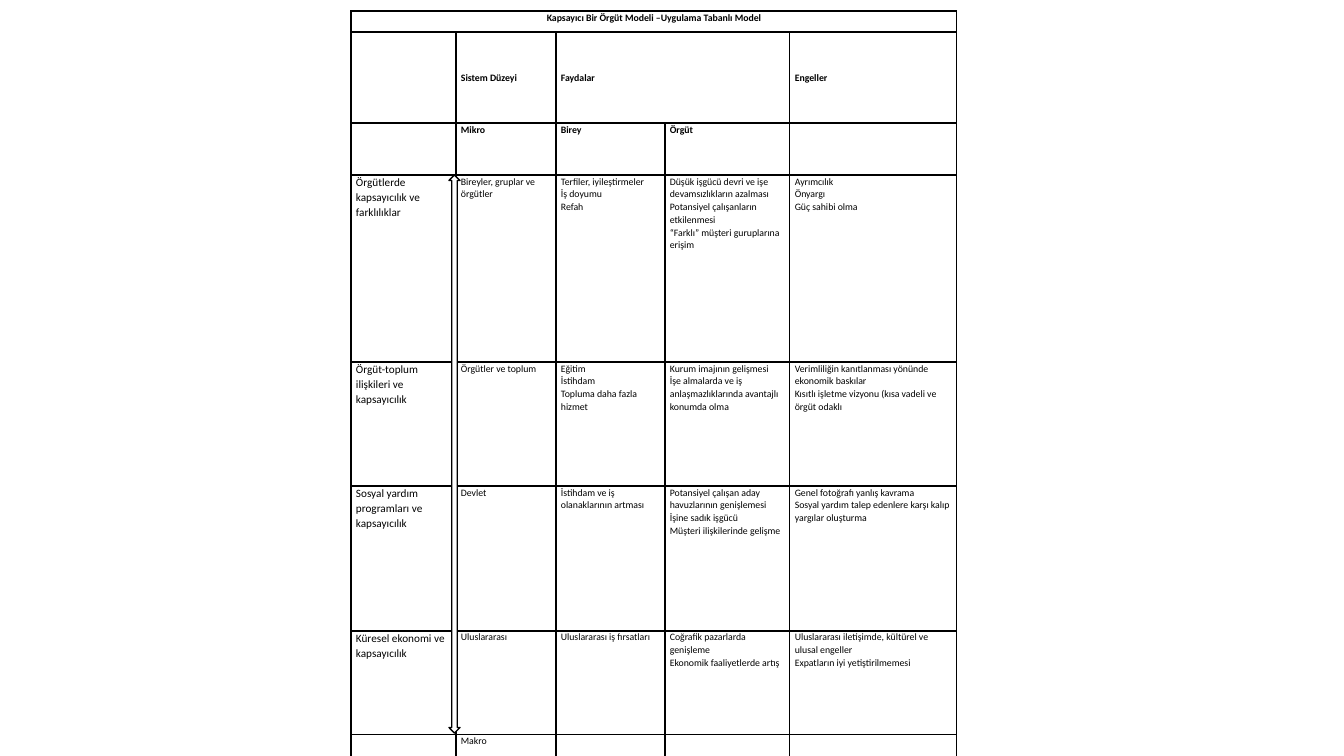
"""Builds the slide with the inclusive organisation model table."""
from lxml import etree
from pptx import Presentation
from pptx import util as u
from pptx.dml.color import RGBColor
from pptx.enum import shapes, text
from pptx.oxml.ns import qn

BLACK = RGBColor(0, 0, 0)
WHITE = RGBColor(255, 255, 255)
FONT = "Calibri"
SCALE = 914400 / 100.8
SLIDE_SIZE = (1344, 756)
TABLE_ORIGIN = (351, 11)
COLUMN_WIDTHS = [105, 100, 109, 125, 167]
ROW_HEIGHTS = [21, 91, 52, 187, 124, 145, 104, 22]
ARROW_BOX = (449, 175, 11, 558)
MERGES = [((0, 0), (0, 4)), ((1, 2), (1, 3))]
TITLE_ROW, LEVEL_ROW, LAST_HEADER_ROW = 0, 1, 2
ROWS = [
    ["Kapsayıcı Bir Örgüt Modeli –Uygulama Tabanlı Model", "", "", "", ""],
    ["", "Sistem Düzeyi", "Faydalar", "", "Engeller"],
    ["", "Mikro", "Birey", "Örgüt", ""],
    ["Örgütlerde kapsayıcılık ve farklılıklar",
     "Bireyler, gruplar ve örgütler",
     "Terfiler, iyileştirmeler\nİş doyumu\nRefah",
     "Düşük işgücü devri ve işe devamsızlıkların azalması\n"
     "Potansiyel çalışanların etkilenmesi\n"
     "“Farklı” müşteri guruplarına erişim",
     "Ayrımcılık\nÖnyargı\nGüç sahibi olma"],
    ["Örgüt-toplum ilişkileri ve kapsayıcılık",
     "Örgütler ve toplum",
     "Eğitim\nİstihdam\nTopluma daha fazla hizmet",
     "Kurum imajının gelişmesi\n"
     "İşe almalarda ve iş anlaşmazlıklarında avantajlı konumda olma",
     "Verimliliğin kanıtlanması yönünde ekonomik baskılar\n"
     "Kısıtlı işletme vizyonu (kısa vadeli ve örgüt odaklı"],
    ["Sosyal yardım programları ve kapsayıcılık",
     "Devlet",
     "İstihdam ve iş olanaklarının artması",
     "Potansiyel çalışan aday havuzlarının genişlemesi\n"
     "İşine sadık işgücü\nMüşteri ilişkilerinde gelişme",
     "Genel fotoğrafı yanlış kavrama\n"
     "Sosyal yardım talep edenlere karşı kalıp yargılar oluşturma"],
    ["Küresel ekonomi ve kapsayıcılık",
     "Uluslararası",
     "Uluslararası iş fırsatları",
     "Coğrafik pazarlarda genişleme\nEkonomik faaliyetlerde artış",
     "Uluslararası iletişimde, kültürel ve ulusal engeller\n"
     "Expatların iyi yetiştirilmemesi"],
    ["", "Makro", "", "", ""],
]


def px(length):
    return u.Emu(round(length * SCALE))


def write_text(frame, content, size=7, bold=False, align=text.PP_ALIGN.LEFT):
    frame.text = content
    for paragraph in frame.paragraphs:
        paragraph.alignment = align
        paragraph.line_spacing = 1.07
        for run in paragraph.runs:
            run.font.name = FONT
            run.font.size = u.Pt(size)
            run.font.bold = bold
            run.font.color.rgb = BLACK
        if not paragraph.runs:
            etree.SubElement(paragraph._p, qn("a:endParaRPr"), sz=str(size * 100))


def draw_borders(cell):
    properties = cell._tc.get_or_add_tcPr()
    for index, side in enumerate(("lnL", "lnR", "lnT", "lnB")):
        line = etree.Element(qn(f"a:{side}"), w=str(u.Pt(1)))
        fill = etree.SubElement(line, qn("a:solidFill"))
        etree.SubElement(fill, qn("a:srgbClr"), val=str(BLACK))
        properties.insert(index, line)


def format_cell(cell, content, row, column):
    cell.margin_left = cell.margin_right = px(5)
    cell.margin_top = cell.margin_bottom = 0
    cell.vertical_anchor = (text.MSO_ANCHOR.MIDDLE if row == LEVEL_ROW
                            else text.MSO_ANCHOR.TOP)
    is_header = row <= LAST_HEADER_ROW
    write_text(cell.text_frame, content, bold=is_header,
               size=8 if column == 0 and content and not is_header else 7,
               align=text.PP_ALIGN.CENTER if row == TITLE_ROW else text.PP_ALIGN.LEFT)
    cell.fill.background()
    draw_borders(cell)


def add_model_table(slide):
    frame = slide.shapes.add_table(
        len(ROW_HEIGHTS), len(COLUMN_WIDTHS), *map(px, TABLE_ORIGIN),
        px(sum(COLUMN_WIDTHS)), px(sum(ROW_HEIGHTS)))
    table = frame.table
    table.first_row = table.horz_banding = False
    for column, width in zip(table.columns, COLUMN_WIDTHS):
        column.width = px(width)
    for row, height in zip(table.rows, ROW_HEIGHTS):
        row.height = px(height)
    for row, contents in enumerate(ROWS):
        for column, content in enumerate(contents):
            format_cell(table.cell(row, column), content, row, column)
    for first, last in MERGES:
        table.cell(*first).merge(table.cell(*last))


def add_level_arrow(slide):
    arrow = slide.shapes.add_shape(shapes.MSO_SHAPE.UP_DOWN_ARROW, *map(px, ARROW_BOX))
    arrow.shadow.inherit = False
    arrow.fill.solid()
    arrow.fill.fore_color.rgb = WHITE
    arrow.line.color.rgb = BLACK
    arrow.line.width = u.Pt(1)


def main():
    presentation = Presentation()
    presentation.slide_width, presentation.slide_height = map(px, SLIDE_SIZE)
    slide = presentation.slides.add_slide(presentation.slide_layouts[6])
    add_model_table(slide)
    add_level_arrow(slide)
    presentation.save("out.pptx")


if __name__ == "__main__":
    main()
